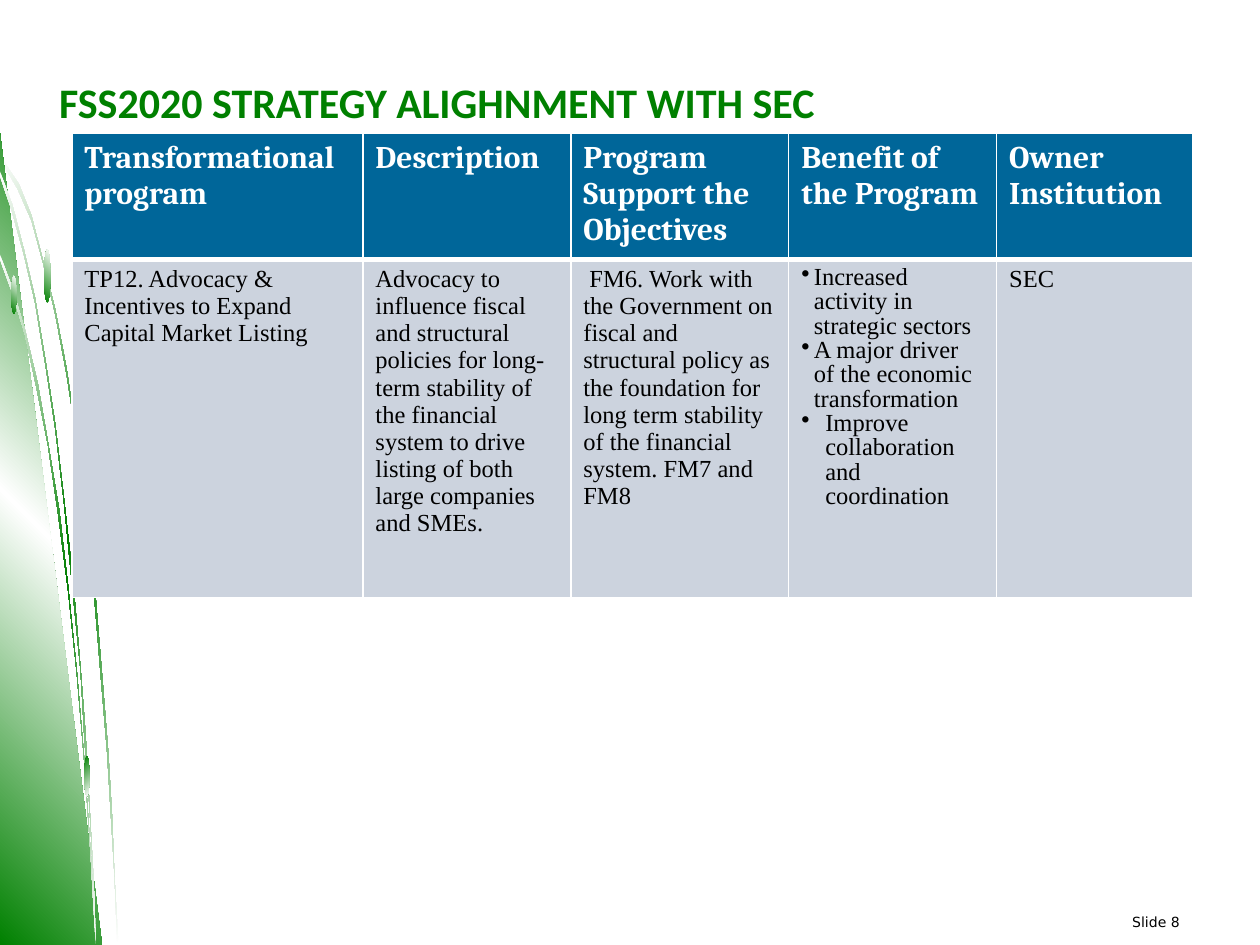
from lxml.etree import SubElement
from pptx import Presentation
from pptx.dml.color import RGBColor as Rgb
from pptx.enum.shapes import MSO_SHAPE as Shape
from pptx.enum.text import MSO_ANCHOR as Anchor, PP_ALIGN as Align
from pptx.oxml.ns import qn
from pptx.util import Inches, Pt

COLORS = {
    "green": "008000",
    "white": "FFFFFF",
    "header": "006699",
    "body": "CCD3DE",
    "black": "000000",
}
COLUMNS, ROWS = 1000, 750
GLOW = ("white", "green", "white")
SHADE = ("green", "white", "green")
FADE = ("green", "white")

UPPER_BLADE = [
    (15, 146), (7, 134), (0, 123), (0, 127), (7, 138), (14, 150), (25, 175),
    (34, 208), (44, 250), (53, 298), (61, 350), (68, 410), (75, 476), (81, 549),
    (85, 597), (88, 647), (91, 697), (93, 749), (94, 749), (91, 697), (89, 647),
    (86, 597), (82, 547), (76, 474), (69, 408), (61, 348), (53, 293), (44, 246),
    (34, 206), (25, 171),
]
WEDGE = [(81, 750), (0, 750), (0, 106)]
LOWER_BLADE = [
    (72, 679), (74, 715), (76, 749), (75, 711), (72, 676), (67, 603), (61, 532),
    (54, 464), (47, 404), (38, 350), (30, 304), (20, 262), (10, 229), (0, 202),
    (0, 206), (10, 233), (20, 266), (29, 308), (38, 353), (46, 407), (54, 468),
    (61, 535), (67, 606),
]
MIDDLE_BLADE = [
    (0, 136), (0, 140), (9, 166), (19, 202), (28, 241), (36, 289), (44, 341),
    (51, 401), (57, 462), (64, 533), (67, 586), (71, 640), (74, 696), (76, 749),
    (74, 692), (71, 637), (68, 582), (64, 530), (58, 459), (51, 397), (44, 337),
    (36, 285), (28, 237), (19, 198), (10, 163),
]
BLADES = [
    (UPPER_BLADE, GLOW, 315),
    (WEDGE, SHADE, 45),
    (LOWER_BLADE, GLOW, 315),
    (MIDDLE_BLADE, GLOW, 315),
]
DEWDROPS = [
    ((9, 219, 4, 30), 45),
    ((67, 600, 4, 32), 315),
    ((35, 198, 5, 42), 45),
]
HEADINGS = [
    "Transformational program",
    "Description",
    "Program Support the Objectives",
    "Benefit of the Program",
    "Owner Institution",
]
PROGRAM = [
    ["TP12. Advocacy & Incentives to Expand Capital Market Listing"],
    ["Advocacy to influence fiscal and structural policies for long-term stability "
     "of the financial system to drive listing of both large companies and SMEs."],
    [" FM6. Work with the Government on fiscal and structural policy as the "
     "foundation for long term stability of the financial system. FM7 and FM8"],
    [("Increased activity in strategic sectors", 0.1),
     ("A major driver of the economic transformation", 0.1),
     ("Improve collaboration and coordination", 0.19)],
    ["SEC"],
]


class SlideKit:
    def __init__(self, deck):
        self.slide = deck.slides.add_slide(deck.slide_layouts[6])
        self.column = deck.slide_width / COLUMNS
        self.row = deck.slide_height / ROWS

    def place(self, left, top, width, height):
        return (round(left * self.column), round(top * self.row),
                round(width * self.column), round(height * self.row))

    def gradient(self, shape, names, angle):
        shape.shadow.inherit = False
        shape.line.fill.background()
        shape.fill.gradient()
        shape.fill.gradient_angle = angle
        stops = shape.element.spPr.find(qn("a:gradFill")).find(qn("a:gsLst"))
        for stop in list(stops):
            stops.remove(stop)
        for index, name in enumerate(names):
            position = 100000 * index // (len(names) - 1)
            stop = SubElement(stops, qn("a:gs"), pos=str(position))
            SubElement(stop, qn("a:srgbClr"), val=COLORS[name])

    def blade(self, points, names, angle):
        builder = self.slide.shapes.build_freeform(
            *points[0], scale=(self.column, self.row))
        builder.add_line_segments(points[1:], close=True)
        self.gradient(builder.convert_to_shape(), names, angle)

    def dewdrop(self, spot, angle):
        drop = self.slide.shapes.add_shape(Shape.OVAL, *self.place(*spot))
        self.gradient(drop, FADE, angle)

    def span(self, para, text, font, size, color, bold=False):
        span = para.add_run()
        span.text = text
        span.font.name = font
        span.font.size = Pt(size)
        span.font.bold = bold
        span.font.color.rgb = Rgb.from_string(COLORS[color])

    def text(self, spot, text, style, insets, anchor=Anchor.TOP,
             align=Align.LEFT, spacing=1.0):
        box = self.slide.shapes.add_textbox(*self.place(*spot))
        frame = box.text_frame
        frame.word_wrap = True
        frame.vertical_anchor = anchor
        (frame.margin_left, frame.margin_top,
         frame.margin_right, frame.margin_bottom) = map(Inches, insets)
        para = frame.paragraphs[0]
        para.alignment = align
        para.line_spacing = spacing
        self.span(para, text, *style)

    def bullet(self, para, indent):
        para.line_spacing = 0.9
        properties = para._p.get_or_add_pPr()
        properties.set("marL", str(Inches(indent)))
        properties.set("indent", str(-Inches(indent)))
        SubElement(properties, qn("a:buChar"), char="•")

    def cell(self, cell, items, fill, style, edges):
        cell.fill.solid()
        cell.fill.fore_color.rgb = Rgb.from_string(COLORS[fill])
        properties = cell._tc.get_or_add_tcPr()
        for index, (side, points) in enumerate(zip("LRTB", edges)):
            edge = SubElement(properties, qn(f"a:ln{side}"), w=str(Pt(points)))
            paint = SubElement(edge, qn("a:solidFill"))
            SubElement(paint, qn("a:srgbClr"), val=COLORS["white"])
            properties.insert(index, edge)
        for index, item in enumerate(items):
            frame = cell.text_frame
            para = frame.add_paragraph() if index else frame.paragraphs[0]
            text, indent = item if isinstance(item, tuple) else (item, None)
            if indent:
                self.bullet(para, indent)
            self.span(para, text, *style)

    def table(self, left, top, widths, heights, rows):
        spot = self.place(left, top, sum(widths), sum(heights))
        table = self.slide.shapes.add_table(len(heights), len(widths), *spot).table
        table.horz_banding = False
        for column, width in zip(table.columns, widths):
            column.width = round(width * self.column)
        for row, height, (items, *look) in zip(table.rows, heights, rows):
            row.height = round(height * self.row)
            for cell, content in zip(row.cells, items):
                self.cell(cell, content, *look)


def main():
    deck = Presentation()
    deck.slide_width, deck.slide_height = Inches(10), Inches(7.5)
    kit = SlideKit(deck)
    for blade in BLADES:
        kit.blade(*blade)
    for dewdrop in DEWDROPS:
        kit.dewdrop(*dewdrop)
    kit.text((47, 25, 927, 76), "FSS2020 STRATEGY ALIGHNMENT WITH SEC",
             ("Calibri", 24, "green", True), (0, 0, 0, 0), anchor=Anchor.BOTTOM)
    kit.table(57, 106, (231, 165, 173, 165, 156), (96, 268), [
        ([[heading] for heading in HEADINGS], "header",
         ("Cambria", 18, "white", True), (1, 1, 1, 3)),
        (PROGRAM, "body", ("Times New Roman", 14, "black"), (1, 1, 3, 1)),
    ])
    kit.text((838, 724, 159, 35), "Slide 8", ("DejaVu Sans", 8, "black"),
             (0.1, 0.05, 0.1, 0), align=Align.CENTER, spacing=0.7)
    deck.save("out.pptx")


if __name__ == "__main__":
    main()
